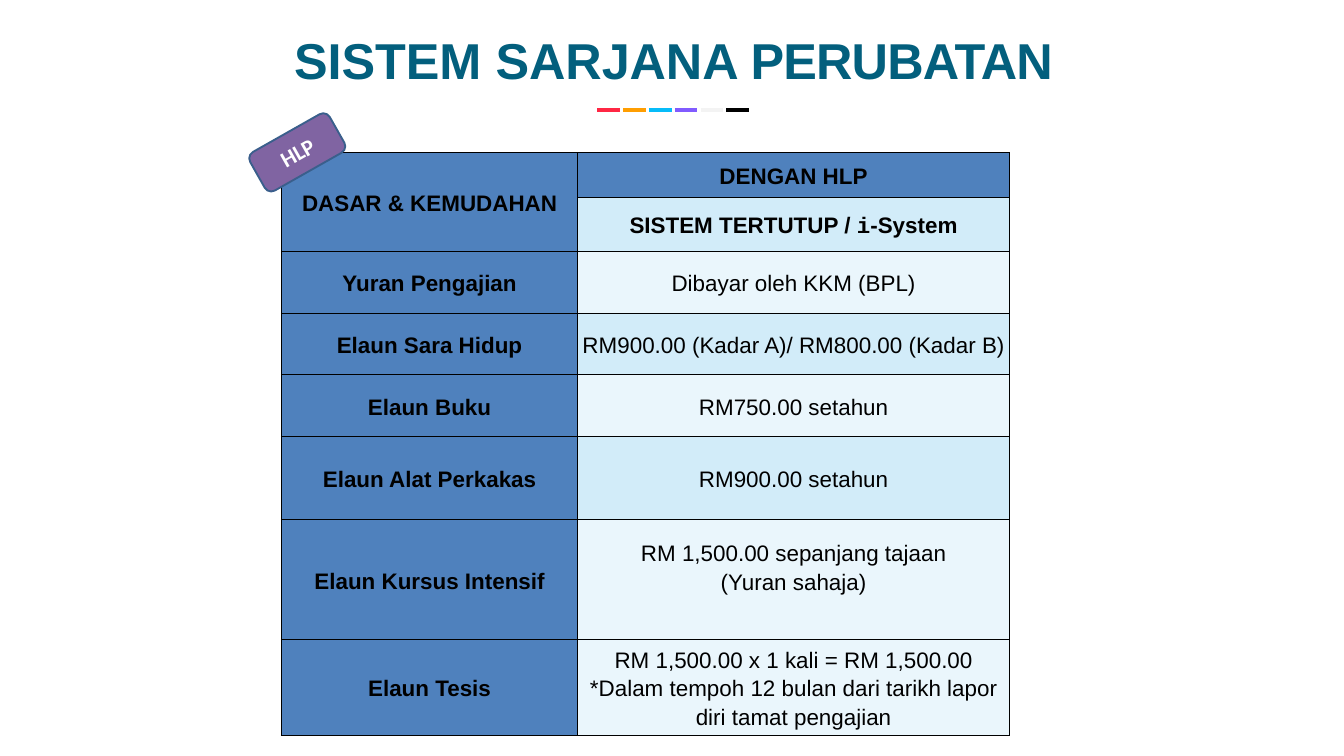
from dataclasses import dataclass

from lxml import etree
from pptx import Presentation
from pptx.dml.color import RGBColor
from pptx.enum.shapes import MSO_CONNECTOR, MSO_SHAPE
from pptx.enum.text import MSO_ANCHOR, PP_ALIGN
from pptx.oxml.ns import qn
from pptx.util import Pt

STRAIGHT = MSO_CONNECTOR.STRAIGHT
ROUNDED = MSO_SHAPE.ROUNDED_RECTANGLE
MIDDLE = MSO_ANCHOR.MIDDLE
CENTER = PP_ALIGN.CENTER

BLACK = RGBColor(0x00, 0x00, 0x00)
WHITE = RGBColor(0xFF, 0xFF, 0xFF)
TEAL = RGBColor(0x03, 0x5F, 0x7D)
BLUE = RGBColor(0x4F, 0x81, 0xBD)
LIGHT = RGBColor(0xD2, 0xEC, 0xF9)
PALE = RGBColor(0xEA, 0xF6, 0xFC)
PURPLE = RGBColor(0x80, 0x64, 0xA2)
NAVY = RGBColor(0x3A, 0x5F, 0x8C)
DASH_COLORS = (
    RGBColor(0xFF, 0x27, 0x44),
    RGBColor(0xFF, 0x9E, 0x01),
    RGBColor(0x07, 0xBC, 0xF9),
    RGBColor(0x81, 0x5B, 0xFF),
    RGBColor(0xF3, 0xF3, 0xF3),
    BLACK,
)


@dataclass(frozen=True)
class TextRun:
    text: str
    font: str = "Arial"
    size: float = 24
    color: RGBColor = BLACK
    bold: bool = True
    spacing: float = 0


@dataclass(frozen=True)
class AllowanceRow:
    label: str
    values: tuple[str, ...]
    height: float
    fill: RGBColor
    bottom_margin: float = 0


TITLE = (
    TextRun("SISTEM ", size=54, color=TEAL),
    TextRun("SARJANA ", size=54, color=TEAL, spacing=-0.1),
    TextRun("PERUBATAN", size=54, color=TEAL, spacing=-0.9),
)
SYSTEM_HEADING = (
    TextRun("SISTEM TERTUTUP / "),
    TextRun("i", font="Courier New"),
    TextRun("-System"),
)
HEADER_HEIGHTS = (48, 58)
COLUMN_WIDTHS = (317.5, 462.5)
ALLOWANCES = (
    AllowanceRow("Yuran Pengajian", ("Dibayar oleh KKM (BPL)",), 66, PALE),
    AllowanceRow("Elaun Sara Hidup", ("RM900.00 (Kadar A)/ RM800.00 (Kadar B)",), 66, LIGHT),
    AllowanceRow("Elaun Buku", ("RM750.00 setahun",), 66, PALE),
    AllowanceRow("Elaun Alat Perkakas", ("RM900.00 setahun",), 89, LIGHT),
    AllowanceRow(
        "Elaun Kursus Intensif",
        ("RM 1,500.00 sepanjang tajaan", "(Yuran sahaja)"),
        129, PALE, bottom_margin=29,
    ),
    AllowanceRow(
        "Elaun Tesis",
        (
            "RM 1,500.00 x 1 kali = RM 1,500.00",
            "*Dalam tempoh 12 bulan dari tarikh lapor diri tamat pengajian",
        ),
        102, PALE,
    ),
)


def write_runs(paragraph, runs: tuple[TextRun, ...]) -> None:
    paragraph.alignment = CENTER
    for item in runs:
        run = paragraph.add_run()
        run.text = item.text
        run.font.name = item.font
        run.font.size = Pt(item.size)
        run.font.bold = item.bold
        run.font.color.rgb = item.color
        if item.spacing:
            run.font._element.set("spc", str(round(item.spacing * 100)))


def add_title(slide) -> None:
    box = slide.shapes.add_textbox(Pt(132), Pt(30), Pt(1176), Pt(67))
    frame = box.text_frame
    frame.word_wrap = True
    frame.margin_left = frame.margin_right = frame.margin_bottom = 0
    frame.margin_top = Pt(1)
    paragraph = frame.paragraphs[0]
    paragraph.space_before = Pt(1)
    write_runs(paragraph, TITLE)
    paragraph._p.get_or_add_pPr().set("marL", str(Pt(3)))


def add_dashes(slide, left: float, top: float, length: float, pitch: float) -> None:
    for index, color in enumerate(DASH_COLORS):
        start = left + index * pitch
        dash = slide.shapes.add_connector(
            STRAIGHT, Pt(start), Pt(top), Pt(start + length), Pt(top)
        )
        dash.line.color.rgb = color
        dash.line.width = Pt(4.32)
        etree.SubElement(dash._element.spPr, qn("a:effectLst"))


def add_borders(cell) -> None:
    properties = cell._tc.get_or_add_tcPr()
    for side in ("a:lnL", "a:lnR", "a:lnT", "a:lnB"):
        line = etree.SubElement(properties, qn(side), w=str(Pt(1)))
        fill = etree.SubElement(line, qn("a:solidFill"))
        etree.SubElement(fill, qn("a:srgbClr"), val=str(BLACK))


def style_cell(cell, color: RGBColor, bottom_margin: float = 0) -> None:
    add_borders(cell)
    cell.fill.solid()
    cell.fill.fore_color.rgb = color
    cell.vertical_anchor = MIDDLE
    cell.margin_left = cell.margin_right = Pt(2)
    cell.margin_top = 0
    cell.margin_bottom = Pt(bottom_margin)


def fill_cell(cell, lines: tuple[tuple[TextRun, ...], ...]) -> None:
    frame = cell.text_frame
    for index, runs in enumerate(lines):
        paragraph = frame.add_paragraph() if index else frame.paragraphs[0]
        paragraph.line_spacing = 1.15
        write_runs(paragraph, runs)


def add_allowance_table(slide) -> None:
    heights = HEADER_HEIGHTS + tuple(row.height for row in ALLOWANCES)
    table = slide.shapes.add_table(
        len(heights), len(COLUMN_WIDTHS), Pt(301.5), Pt(163.5),
        Pt(sum(COLUMN_WIDTHS)), Pt(sum(heights)),
    ).table
    table.first_row = table.horz_banding = False
    for column, width in zip(table.columns, COLUMN_WIDTHS):
        column.width = Pt(width)
    for row, height in zip(table.rows, heights):
        row.height = Pt(height)

    for row_index, color in enumerate((BLUE, LIGHT)):
        style_cell(table.cell(row_index, 0), BLUE)
        style_cell(table.cell(row_index, 1), color)
    table.cell(0, 0).merge(table.cell(1, 0))
    fill_cell(table.cell(0, 0), ((TextRun("DASAR & KEMUDAHAN"),),))
    fill_cell(table.cell(0, 1), ((TextRun("DENGAN HLP"),),))
    fill_cell(table.cell(1, 1), (SYSTEM_HEADING,))

    for row_index, allowance in enumerate(ALLOWANCES, len(HEADER_HEIGHTS)):
        label, value = table.cell(row_index, 0), table.cell(row_index, 1)
        style_cell(label, BLUE)
        style_cell(value, allowance.fill, allowance.bottom_margin)
        fill_cell(label, ((TextRun(allowance.label),),))
        fill_cell(value, tuple((TextRun(text, bold=False),) for text in allowance.values))


def add_badge(slide) -> None:
    badge = slide.shapes.add_shape(ROUNDED, Pt(269.5), Pt(139.5), Pt(98), Pt(47.5))
    badge.rotation = 330.5
    badge.shadow.inherit = False
    badge.fill.solid()
    badge.fill.fore_color.rgb = PURPLE
    badge.line.color.rgb = NAVY
    badge.line.width = Pt(2)
    badge.text_frame.vertical_anchor = MIDDLE
    write_runs(badge.text_frame.paragraphs[0], (TextRun("HLP", font="Calibri", color=WHITE),))


def main() -> None:
    presentation = Presentation()
    presentation.slide_width = Pt(1440)
    presentation.slide_height = Pt(810)
    slide = presentation.slides.add_slide(presentation.slide_layouts[6])
    add_title(slide)
    add_dashes(slide, left=640, top=117.5, length=24.2, pitch=27.65)
    add_allowance_table(slide)
    add_badge(slide)
    presentation.save("out.pptx")


if __name__ == "__main__":
    main()
